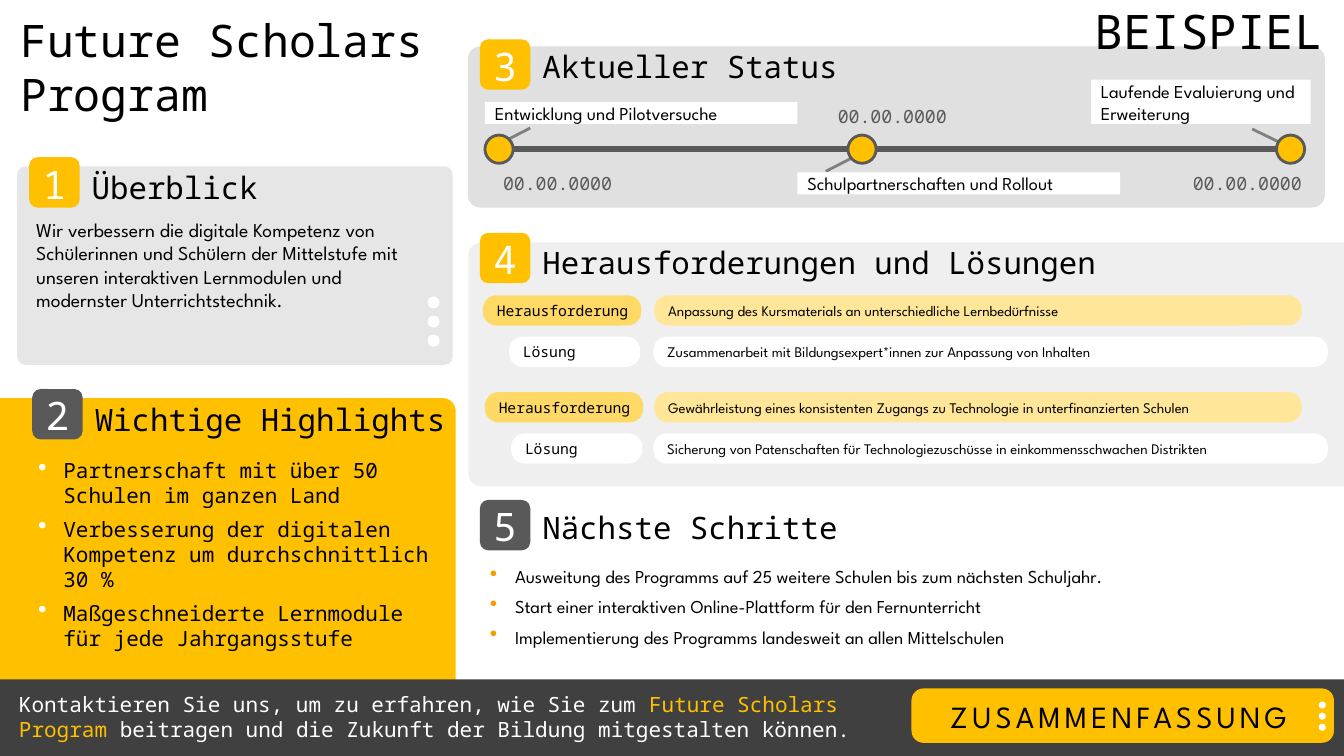
from lxml import etree
from pptx import Presentation
from pptx.dml import color as c
from pptx.enum import shapes as s, text as t
from pptx.oxml import ns
from pptx.util import Inches, Pt

MONO, SPARTAN = "Noto Sans Mono", "League Spartan"
YELLOW, WHITE, GRAY = "FFC000", "FFFFFF", "595959"
RECT, ROUND = s.MSO_SHAPE.RECTANGLE, s.MSO_SHAPE.ROUNDED_RECTANGLE
OVAL = s.MSO_SHAPE.OVAL
PADDED = (0.1, 0.05, 0.1, 0.05)


def write(box, content, size, font=MONO, color="000000", align=t.PP_ALIGN.LEFT,
          anchor=t.MSO_ANCHOR.TOP, inset=(0, 0, 0, 0), wrap=True,
          spacing=0, bullet=None):
    """Fill a box; content is a list of paragraphs, each a list of (text, color) or a string."""
    frame = box.text_frame
    frame.word_wrap = wrap
    frame.auto_size = t.MSO_AUTO_SIZE.NONE
    frame.vertical_anchor = anchor
    (frame.margin_left, frame.margin_top,
     frame.margin_right, frame.margin_bottom) = map(Inches, inset)
    for index, item in enumerate([content] if isinstance(content, str) else content):
        para = frame.add_paragraph() if index else frame.paragraphs[0]
        para.alignment = align
        for words, shade in [(item, color)] if isinstance(item, str) else item:
            span = para.add_run()
            span.text = words
            span.font.name, span.font.size = font, Pt(size)
            span.font.color.rgb = c.RGBColor.from_string(shade)
            if spacing:
                span.font._element.set("spc", str(spacing * 100))
        if bullet:
            para.space_after = Pt(6)
            props = para._p.get_or_add_pPr()
            props.set("marL", str(Inches(0.25)))
            props.set("indent", str(-Inches(0.25)))
            tint = etree.SubElement(props, ns.qn("a:buClr"))
            etree.SubElement(tint, ns.qn("a:srgbClr"), val=bullet)
            etree.SubElement(props, ns.qn("a:buSzPct"), val="120000")
            etree.SubElement(props, ns.qn("a:buChar"), char="•")


def place(kind, at, fill=None, radius=None, outline=None):
    """Add a preset shape, or a text box when kind is None."""
    at = [Inches(length) for length in at]
    if kind is None:
        return page.shapes.add_textbox(*at)
    shape = page.shapes.add_shape(kind, *at)
    shape.shadow.inherit = False
    shape.fill.solid()
    shape.fill.fore_color.rgb = c.RGBColor.from_string(fill)
    if radius is not None:
        shape.adjustments[0] = radius
    if outline:
        shape.line.color.rgb = c.RGBColor.from_string(outline)
        shape.line.width = Pt(2)
    else:
        shape.line.fill.background()
    return shape


deck = Presentation()
deck.slide_width, deck.slide_height = Inches(13.33), Inches(7.5)
page = deck.slides.add_slide(deck.slide_layouts[5])

# Title and corner mark
title = page.shapes.title
title.left, title.top, title.width, title.height = map(Inches, (0.2, 0.13, 4.04, 1.26))
write(title, "Future Scholars Program", 32)

# Section panels and footer band
challenge_panel = place(s.MSO_SHAPE.ROUND_2_SAME_RECTANGLE, (7.78, -0.73, 2.42, 8.69),
                        "EFEFEF", 0.054)
challenge_panel.rotation = 270
place(ROUND, (4.64, 0.46, 8.5, 1.6), "E0E0E0", 0.079)
place(s.MSO_SHAPE.ROUND_1_RECTANGLE, (0, 3.95, 4.52, 3.55), YELLOW, 0.036)
place(ROUND, (0.17, 1.65, 4.32, 1.97), "E7E6E6", 0.042)
place(RECT, (0, 6.74, 13.33, 0.76), "404040")
write(place(None, (10.86, 0.02, 2.27, 0.55)), "BEISPIEL", 34, wrap=False)

# Numbered section headings
headings = [
    ("Überblick", 0.29, 1.56, 1.68, YELLOW),
    ("Wichtige Highlights", 0.32, 3.86, 3.98, GRAY),
    ("Aktueller Status", 4.76, 0.39, 0.48, YELLOW),
    ("Herausforderungen und Lösungen", 4.76, 2.31, 2.42, YELLOW),
    ("Nächste Schritte", 4.76, 4.96, 5.05, GRAY),
]
for number, (heading, left, top, text_top, fill) in enumerate(headings, 1):
    place(ROUND, (left, top, 0.5, 0.5), fill)
    write(place(None, (left, top + 0.1, 0.5, 0.32)), str(number), 28, color=WHITE,
          align=t.PP_ALIGN.CENTER, anchor=t.MSO_ANCHOR.MIDDLE, spacing=-3)
    write(place(None, (left + 0.62, text_top, 6, 0.36)), heading, 22,
          anchor=t.MSO_ANCHOR.MIDDLE)

# Overview, highlights and next steps
write(place(None, (0.26, 2.11, 3.89, 1.28)),
      "Wir verbessern die digitale Kompetenz von Schülerinnen und Schülern der "
      "Mittelstufe mit unseren interaktiven Lernmodulen und modernster "
      "Unterrichtstechnik.", 14, SPARTAN, inset=PADDED)
write(place(None, (0.28, 4.49, 4.11, 2.04)), [
    "Partnerschaft mit über 50 Schulen im ganzen Land",
    "Verbesserung der digitalen Kompetenz um durchschnittlich 30 %",
    "Maßgeschneiderte Lernmodule für jede Jahrgangsstufe",
], 15, inset=PADDED, bullet=WHITE)
write(place(None, (4.76, 5.56, 8.45, 0.93)), [
    "Ausweitung des Programms auf 25 weitere Schulen bis zum nächsten Schuljahr.",
    "Start einer interaktiven Online-Plattform für den Fernunterricht",
    "Implementierung des Programms landesweit an allen Mittelschulen",
], 13, SPARTAN, inset=PADDED, bullet="F59C00")

# Timeline: pointers first, then the axis
for x1, y1, x2, y2, color, width in [
    (12.81, 1.47, 12.42, 1.28, "808080", 2),
    (8.19, 1.7, 8.58, 1.5, "808080", 2),
    (4.87, 1.47, 5.26, 1.27, "808080", 2),
    (4.94, 1.48, 12.9, 1.48, GRAY, 4),
]:
    line = page.shapes.add_connector(s.MSO_CONNECTOR.STRAIGHT,
                                     *map(Inches, (x1, y1, x2, y2)))
    line.line.color.rgb = c.RGBColor.from_string(color)
    line.line.width = Pt(width)
    etree.SubElement(line._element.spPr, ns.qn("a:effectLst"))

# Timeline milestones: marker, label, date
milestones = [
    (4.81, "Entwicklung und Pilotversuche", (4.81, 1.01, 3.1, 0.22), 4.76, 1.66),
    (8.41, "Schulpartnerschaften und Rollout", (7.91, 1.71, 3.2, 0.22), 8.08, 1),
    (12.66, "Laufende Evaluierung und Erweiterung", (10.82, 0.79, 2.18, 0.44), 11.6, 1.66),
]
for marker_left, label, label_at, date_left, date_top in milestones:
    place(OVAL, (marker_left, 1.34, 0.28, 0.28), YELLOW, outline=GRAY)
    write(place(RECT, label_at, WHITE), label, 13, SPARTAN,
          anchor=t.MSO_ANCHOR.MIDDLE, inset=(0.1, 0, 0.1, 0))
    write(place(None, (date_left, date_top, 1.54, 0.32)), "00.00.0000", 13,
          color=GRAY, align=t.PP_ALIGN.CENTER, inset=PADDED)

# Challenge and solution pairs
pairs = [
    (2.93, 0, "Anpassung des Kursmaterials an unterschiedliche Lernbedürfnisse",
     "Zusammenarbeit mit Bildungsexpert*innen zur Anpassung von Inhalten"),
    (3.89, 0.02,
     "Gewährleistung eines konsistenten Zugangs zu Technologie in unterfinanzierten Schulen",
     "Sicherung von Patenschaften für Technologiezuschüsse in einkommensschwachen Distrikten"),
]
for top, shift, challenge, solution in pairs:
    for left, row, width, fill, words, font in [
        (4.79 + shift, top, 1.57, "FFD966", "Herausforderung", MONO),
        (5.05 + shift, top + 0.41, 1.3, WHITE, "Lösung", MONO),
        (6.49, top, 6.42, "FFE699", challenge, SPARTAN),
        (6.48, top + 0.41, 6.69, WHITE, solution, SPARTAN),
    ]:
        write(place(ROUND, (left, row, width, 0.3), fill, 0.448), words, 10.5, font,
              anchor=t.MSO_ANCHOR.MIDDLE, inset=(0.1, 0, 0, 0))

# Footer message and summary button
write(place(None, (0.09, 6.81, 8.87, 0.61)), [[
    ("Kontaktieren Sie uns, um zu erfahren, wie Sie zum ", WHITE),
    ("Future Scholars Program", YELLOW),
    (" beitragen und die Zukunft der Bildung mitgestalten können.", WHITE),
]], 15, inset=PADDED)
place(ROUND, (9.04, 6.83, 4.19, 0.54), YELLOW, 0.221)
write(place(None, (9.04, 6.87, 4.11, 0.47)), "ZUSAMMENFASSUNG", 22, SPARTAN,
      align=t.PP_ALIGN.CENTER, inset=PADDED, spacing=3)

# Columns of three dots
for left, top, size, step in [(4.24, 2.94, 0.12, 0.19), (13.08, 6.96, 0.07, 0.11)]:
    for index in range(3):
        place(OVAL, (left, top + index * step, size, size), WHITE)

deck.save("out.pptx")
